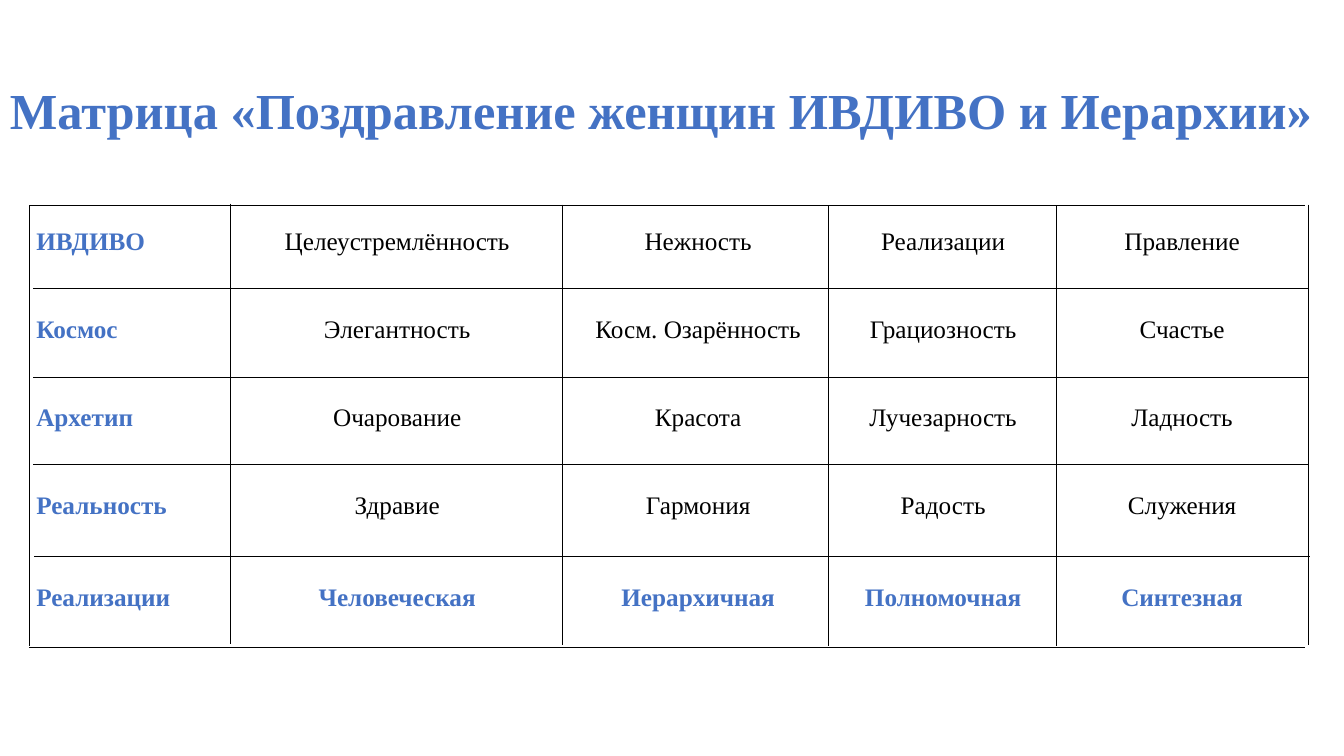
from lxml import etree
from pptx import Presentation
from pptx.dml.color import RGBColor
from pptx.enum.shapes import MSO_CONNECTOR
from pptx.enum.text import MSO_ANCHOR, PP_ALIGN
from pptx.oxml.ns import qn
from pptx.util import Inches, Pt

STRAIGHT = MSO_CONNECTOR.STRAIGHT
TOP, MIDDLE = MSO_ANCHOR.TOP, MSO_ANCHOR.MIDDLE
LEFT, CENTER = PP_ALIGN.LEFT, PP_ALIGN.CENTER

BLUE = RGBColor(0x44, 0x72, 0xC4)
BLACK = RGBColor(0, 0, 0)
WHITE = RGBColor(0xFF, 0xFF, 0xFF)
FONT = "Times New Roman"

TITLE = "Матрица «Поздравление женщин ИВДИВО и Иерархии»"
ROWS = [
    ["ИВДИВО", "Целеустремлённость", "Нежность", "Реализации", "Правление"],
    ["Космос", "Элегантность", "Косм. Озарённость", "Грациозность", "Счастье"],
    ["Архетип", "Очарование", "Красота", "Лучезарность", "Ладность"],
    ["Реальность", "Здравие", "Гармония", "Радость", "Служения"],
    ["Реализации", "Человеческая", "Иерархичная", "Полномочная", "Синтезная"],
]
COL_WIDTHS = [1.99, 3.32, 2.65, 2.21, 2.53]

TITLE_BOX = (0, 0.4, 13.2, 1.45)
TABLE_BOX = (0.29, 2, 12.69, 4.37)
RULE_WIDTH, RULE_HEIGHT = 12.65, 4.37
VERTICALS = [(0.29, 2.04), (2.28, 2.02), (5.58, 2.03),
             (8.22, 2.04), (10.48, 2.04), (12.98, 2.03)]
HORIZONTALS = [(0.29, 2.04), (0.33, 2.86), (0.33, 3.74),
               (0.33, 4.61), (0.34, 5.52), (0.29, 6.42)]


def style_text(p, size, color, bold, align):
    """Format a paragraph and its runs."""
    p.alignment = align
    for r in p.runs:
        r.font.name = FONT
        r.font.size = Pt(size)
        r.font.bold = bold
        r.font.color.rgb = color


def add_title(s, box):
    """Place the heading in its box."""
    tf = s.shapes.add_textbox(*map(Inches, box)).text_frame
    tf.word_wrap = True
    tf.vertical_anchor = MIDDLE
    tf.text = TITLE
    p = tf.paragraphs[0]
    p.line_spacing = 0.9
    style_text(p, 36, BLUE, True, LEFT)


def add_matrix(s, box):
    """Fill the box with the table of qualities."""
    table = s.shapes.add_table(len(ROWS), len(COL_WIDTHS), *map(Inches, box)).table
    table.first_row = table.horz_banding = False
    for column, width in zip(table.columns, COL_WIDTHS):
        column.width = Inches(width)
    for i, row in enumerate(ROWS):
        last = i == len(ROWS) - 1
        for j, text in enumerate(row):
            cell = table.cell(i, j)
            cell.fill.solid()
            cell.fill.fore_color.rgb = WHITE
            cell.margin_left = cell.margin_right = Inches(0.07)
            cell.margin_top = Inches(0 if last else 0.26)
            cell.margin_bottom = 0
            cell.vertical_anchor = MIDDLE if last else TOP
            cell.text_frame.text = text
            heading = last or j == 0
            style_text(cell.text_frame.paragraphs[0], 18,
                       BLUE if heading else BLACK, heading,
                       CENTER if j else LEFT)


def add_rules(s, starts, dx, dy):
    """Draw parallel thin lines of one length from the given points."""
    for x, y in starts:
        line = s.shapes.add_connector(
            STRAIGHT, *map(Inches, (x, y, x + dx, y + dy)))
        line.line.color.rgb = BLACK
        line.line.width = Pt(0.5)
        etree.SubElement(line._element.spPr, qn("a:effectLst"))


def main():
    """Build and save the slide."""
    prs = Presentation()
    prs.slide_width, prs.slide_height = Inches(13.33), Inches(7.5)
    s = prs.slides.add_slide(prs.slide_layouts[6])
    add_title(s, TITLE_BOX)
    add_matrix(s, TABLE_BOX)
    add_rules(s, VERTICALS, 0, RULE_HEIGHT)
    add_rules(s, HORIZONTALS, RULE_WIDTH, 0)
    prs.save("out.pptx")


if __name__ == "__main__":
    main()
